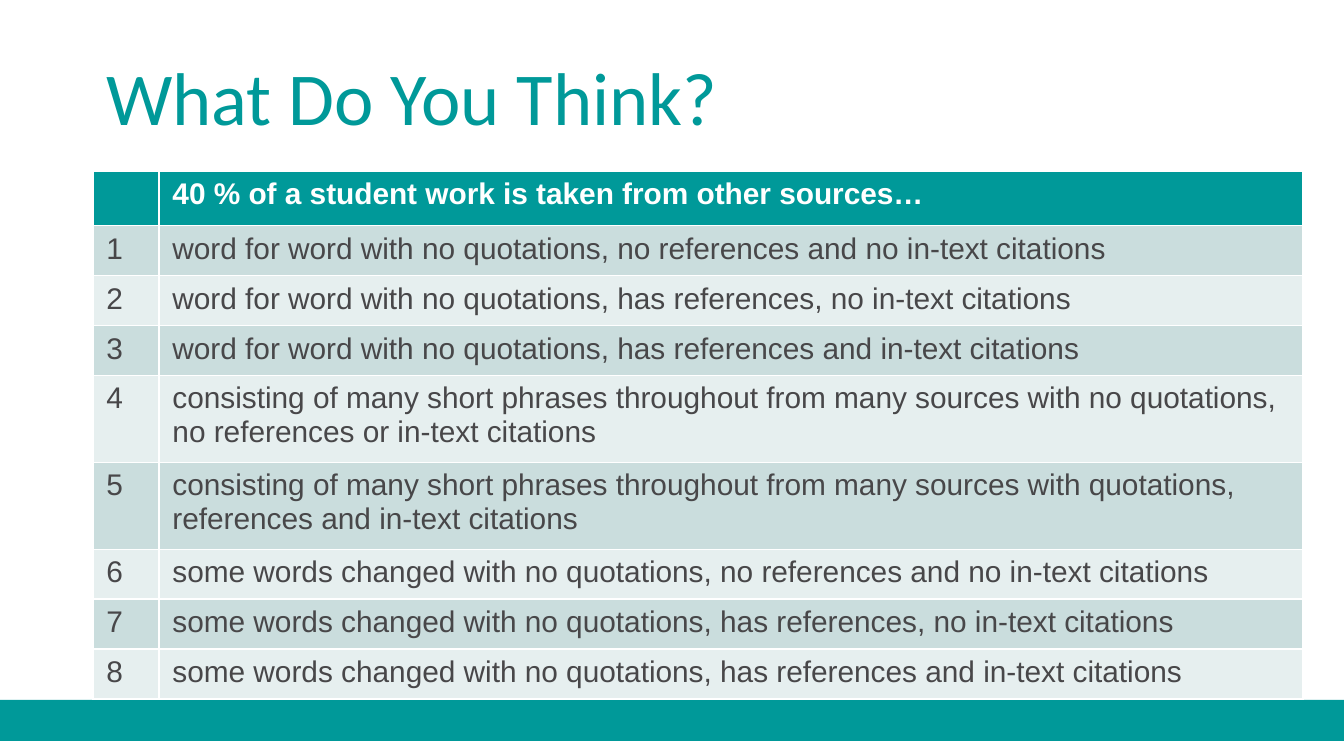
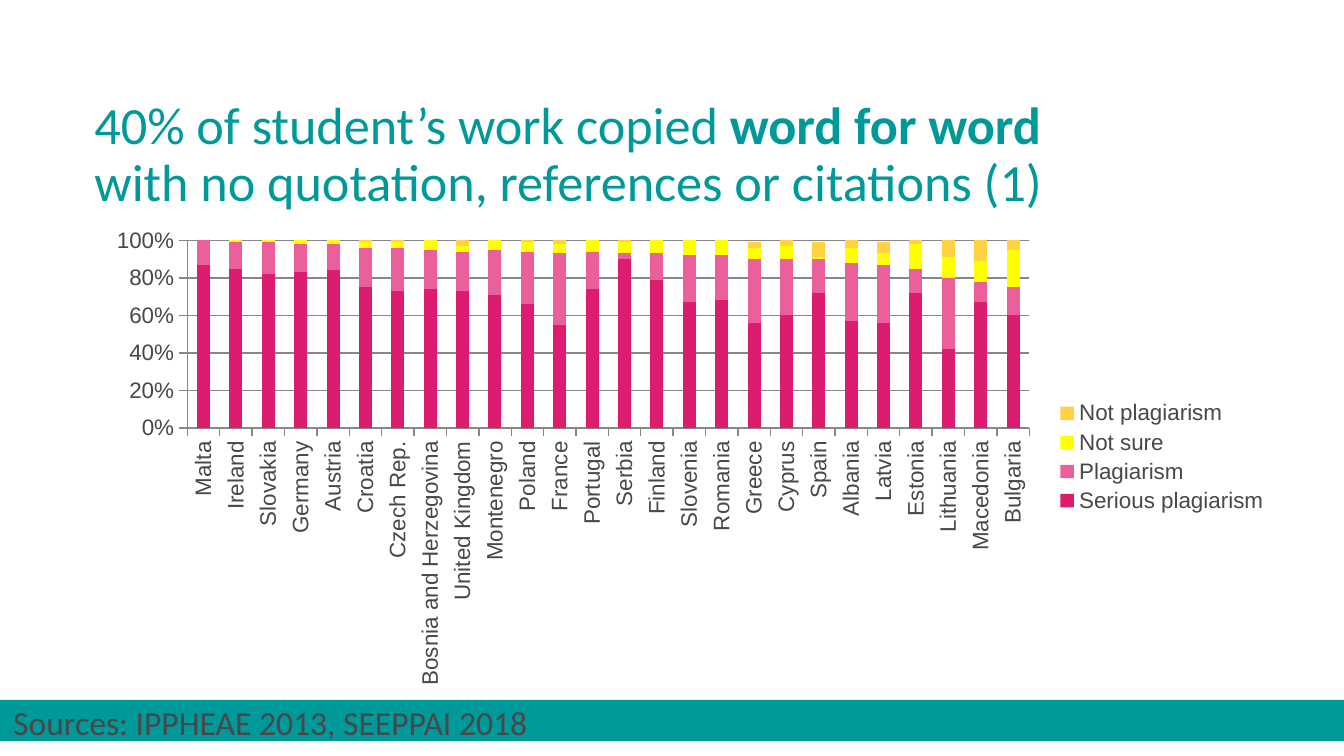
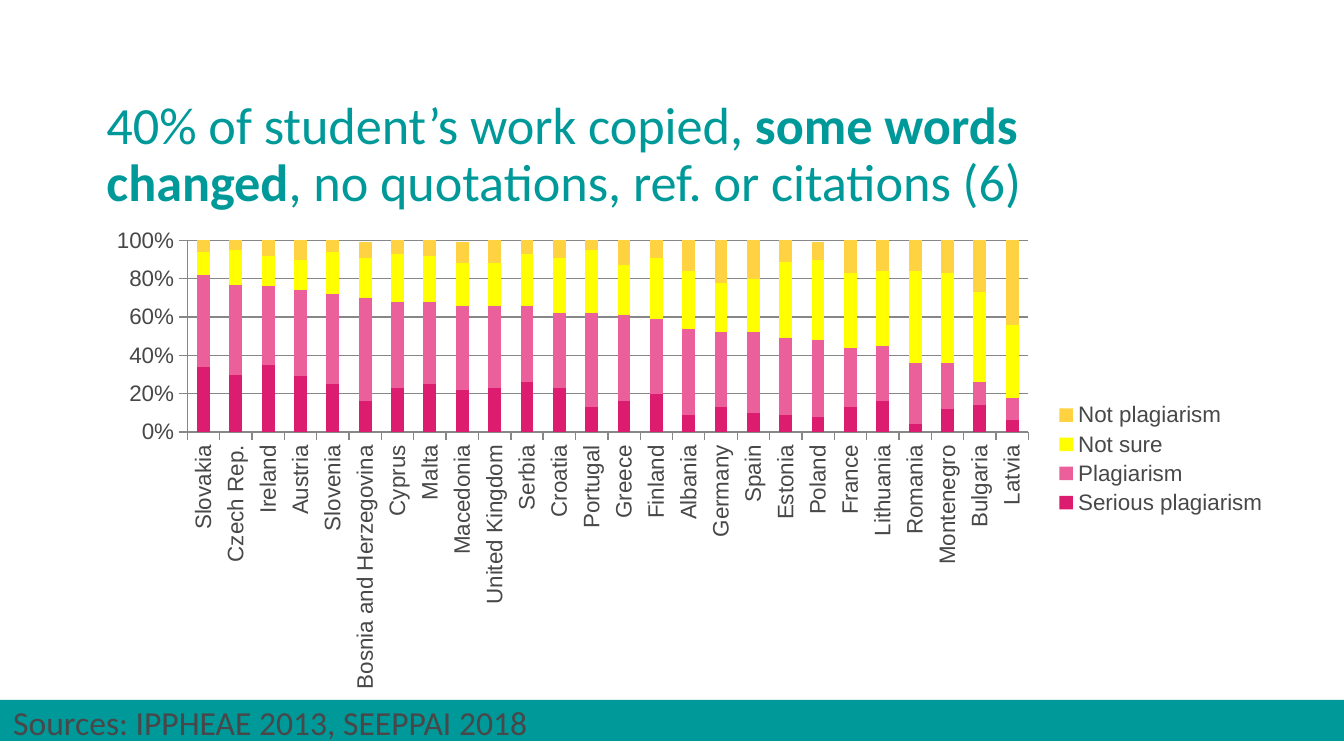
from pptx import Presentation
from pptx.chart.data import CategoryChartData
from pptx.dml.color import RGBColor
from pptx.enum.chart import XL_CHART_TYPE, XL_LEGEND_POSITION, XL_TICK_MARK
from pptx.enum.shapes import MSO_SHAPE
from pptx.enum.text import MSO_ANCHOR, MSO_AUTO_SIZE, PP_ALIGN
from pptx.util import Inches, Pt

TEAL, GREY, WHITE, AXIS_GREY = "009999", "484749", "FFFFFF", "878787"
ROW_FILLS = ["E6EFEF", "CADDDD"]
HEADING_FONT, BODY_FONT = "Calibri", "Arial"
PAGE_WIDTH, PAGE_HEIGHT = 1344, 756
LEFT = 93

QUESTION = {
    "title": [("What Do You Think?", False)],
    "title_box": (LEFT, 40, 1016, 122),
    "header": "40 % of a student work is taken from other sources…",
    "cases": [
        "word for word with no quotations, no references and no in-text citations",
        "word for word with no quotations, has references, no in-text citations",
        "word for word with no quotations, has references and in-text citations",
        "consisting of many short phrases throughout from many sources with no quotations, "
        "no references or in-text citations",
        "consisting of many short phrases throughout from many sources with quotations, "
        "references and in-text citations",
        "some words changed with no quotations, no references and no in-text citations",
        "some words changed with no quotations, has references, no in-text citations",
        "some words changed with no quotations, has references and in-text citations",
    ],
}
ONE_LINE, TWO_LINES, LINE_LIMIT = 50, 87, 90
NUMBER_WIDTH, CASE_WIDTH = 66, 1144

SOURCES = "Sources: IPPHEAE 2013, SEEPPAI 2018"
ANSWERS = [
    ("Serious plagiarism", "DC1C6E"),
    ("Plagiarism", "EB5F9B"),
    ("Not sure", "FFFF00"),
    ("Not plagiarism", "FFD242"),
]
SURVEYS = [
    {
        "title": [
            ("40% of student’s work copied ", False),
            ("word for word ", True),
            ("with no quotation, references or citations (1)", False),
        ],
        "title_box": (81, 93, 1052, 126),
        "chart_box": (LEFT, 219, 1189, 476),
        "countries": [
            "Malta", "Ireland", "Slovakia", "Germany", "Austria", "Croatia", "Czech Rep.",
            "Bosnia and Herzegovina", "United Kingdom", "Montenegro", "Poland", "France",
            "Portugal", "Serbia", "Finland", "Slovenia", "Romania", "Greece", "Cyprus",
            "Spain", "Albania", "Latvia", "Estonia", "Lithuania", "Macedonia", "Bulgaria",
        ],
        "shares": [
            [0.87, 0.85, 0.82, 0.83, 0.84, 0.75, 0.73, 0.74, 0.73, 0.71, 0.66, 0.55, 0.74,
             0.9, 0.79, 0.67, 0.68, 0.56, 0.6, 0.72, 0.57, 0.56, 0.72, 0.42, 0.67, 0.6],
            [0.13, 0.14, 0.17, 0.15, 0.14, 0.21, 0.23, 0.21, 0.21, 0.24, 0.28, 0.38, 0.2,
             0.03, 0.14, 0.25, 0.24, 0.34, 0.3, 0.18, 0.31, 0.31, 0.13, 0.38, 0.11, 0.15],
            [0, 0.01, 0.01, 0.02, 0.02, 0.03, 0.03, 0.05, 0.03, 0.06, 0.05, 0.05, 0.06,
             0.06, 0.07, 0.08, 0.08, 0.06, 0.07, 0.01, 0.08, 0.06, 0.13, 0.11, 0.11, 0.2],
            [0, 0, 0.01, 0, 0.01, 0.01, 0.01, 0, 0.03, 0, 0.01, 0.02, 0.01,
             0.01, 0.01, 0, 0.01, 0.03, 0.03, 0.08, 0.04, 0.06, 0.02, 0.09, 0.11, 0.05],
        ],
    },
    {
        "title": [
            ("40% of student’s work copied, ", False),
            ("some words changed", True),
            (", no quotations, ref. or citations (6)", False),
        ],
        "title_box": (LEFT, 93, 1064, 126),
        "chart_box": (LEFT, 219, 1188, 480),
        "countries": [
            "Slovakia", "Czech Rep.", "Ireland", "Austria", "Slovenia",
            "Bosnia and Herzegovina", "Cyprus", "Malta", "Macedonia", "United Kingdom",
            "Serbia", "Croatia", "Portugal", "Greece", "Finland", "Albania", "Germany",
            "Spain", "Estonia", "Poland", "France", "Lithuania", "Romania", "Montenegro",
            "Bulgaria", "Latvia",
        ],
        "shares": [
            [0.34, 0.3, 0.35, 0.29, 0.25, 0.16, 0.23, 0.25, 0.22, 0.23, 0.26, 0.23, 0.13,
             0.16, 0.2, 0.09, 0.13, 0.1, 0.09, 0.08, 0.13, 0.16, 0.04, 0.12, 0.14, 0.06],
            [0.48, 0.47, 0.41, 0.45, 0.47, 0.54, 0.45, 0.43, 0.44, 0.43, 0.4, 0.39, 0.49,
             0.45, 0.39, 0.45, 0.39, 0.42, 0.4, 0.4, 0.31, 0.29, 0.32, 0.24, 0.12, 0.12],
            [0.12, 0.18, 0.16, 0.16, 0.22, 0.21, 0.25, 0.24, 0.22, 0.22, 0.27, 0.29, 0.33,
             0.26, 0.32, 0.3, 0.26, 0.28, 0.4, 0.42, 0.39, 0.39, 0.48, 0.47, 0.47, 0.38],
            [0.06, 0.06, 0.09, 0.1, 0.06, 0.08, 0.07, 0.09, 0.11, 0.12, 0.08, 0.09, 0.05,
             0.13, 0.09, 0.17, 0.22, 0.2, 0.11, 0.09, 0.17, 0.17, 0.16, 0.18, 0.27, 0.44],
        ],
    },
]


def px(*lengths):
    return [round(length * Inches(10) / PAGE_WIDTH) for length in lengths]


def rgb(color):
    return RGBColor.from_string(color)


def style_font(font, size, color, name, bold=False):
    font.size, font.name, font.bold = Pt(size), name, bold
    font.color.rgb = rgb(color)


def write(para, text, size=16, color=GREY, name=BODY_FONT, bold=False):
    span = para.add_run()
    span.text = text
    style_font(span.font, size, color, name, bold)


def add_page(deck, content, title_size):
    page = deck.slides.add_slide(deck.slide_layouts[5])
    title = page.shapes.title
    title.left, title.top, title.width, title.height = px(*content["title_box"])
    frame = title.text_frame
    frame.word_wrap, frame.auto_size = True, MSO_AUTO_SIZE.NONE
    frame.vertical_anchor = MSO_ANCHOR.MIDDLE
    para = frame.paragraphs[0]
    para.alignment, para.line_spacing = PP_ALIGN.LEFT, 0.9
    for text, bold in content["title"]:
        write(para, text, size=title_size, color=TEAL, name=HEADING_FONT, bold=bold)
    return page


def add_layout_band(page):
    band = page.shapes.add_shape(MSO_SHAPE.RECTANGLE, *px(0, 700, PAGE_WIDTH, 41))
    band.shadow.inherit = False
    band.fill.solid()
    band.fill.fore_color.rgb = rgb(TEAL)
    band.line.fill.background()
    page.slide_layout.shapes._spTree.append(band._element)


def add_case_table(page):
    rows = [("", QUESTION["header"])]
    rows += [(str(number), case) for number, case in enumerate(QUESTION["cases"], 1)]
    heights = [TWO_LINES if len(case) > LINE_LIMIT else ONE_LINE for _, case in rows]
    box = px(LEFT, 171, NUMBER_WIDTH + CASE_WIDTH, sum(heights))
    table = page.shapes.add_table(len(rows), 2, *box).table
    table.columns[0].width, table.columns[1].width = px(NUMBER_WIDTH, CASE_WIDTH)
    for index, (row, height) in enumerate(zip(rows, heights)):
        table.rows[index].height = px(height)[0]
        header = index == 0
        for column, text in enumerate(row):
            cell = table.cell(index, column)
            cell.fill.solid()
            cell.fill.fore_color.rgb = rgb(TEAL if header else ROW_FILLS[index % 2])
            if text:
                write(cell.text_frame.paragraphs[0], text,
                      color=WHITE if header else GREY, bold=header)


def add_survey_chart(page, survey):
    data = CategoryChartData(number_format="0%")
    data.categories = survey["countries"]
    for (answer, _), shares in zip(ANSWERS, survey["shares"]):
        data.add_series(answer, shares)
    box = px(*survey["chart_box"])
    chart = page.shapes.add_chart(XL_CHART_TYPE.COLUMN_STACKED, *box, data).chart
    style_font(chart.font, 12, GREY, BODY_FONT)
    chart.has_title = False
    chart.has_legend = True
    chart.legend.position = XL_LEGEND_POSITION.RIGHT
    chart.legend.include_in_layout = False
    plot = chart.plots[0]
    plot.gap_width, plot.overlap, plot.vary_by_categories = 150, 100, False
    for series, (_, color) in zip(plot.series, ANSWERS):
        series.format.fill.solid()
        series.format.fill.fore_color.rgb = rgb(color)
    countries, share = chart.category_axis, chart.value_axis
    share.minimum_scale, share.maximum_scale, share.major_unit = 0, 1, 0.2
    share.has_major_gridlines = True
    share.tick_labels.number_format = "0%"
    share.tick_labels.number_format_is_linked = False
    for axis in (countries, share):
        axis.major_tick_mark = XL_TICK_MARK.OUTSIDE
        style_font(axis.tick_labels.font, 12, GREY, BODY_FONT)
    for line in (countries.format.line, share.format.line, share.major_gridlines.format.line):
        line.color.rgb = rgb(AXIS_GREY)
        line.width = Pt(0.75)
    label_body = countries._element.txPr.bodyPr
    label_body.set("rot", "-5400000")
    label_body.set("vert", "horz")


def add_sources(page):
    box = page.shapes.add_textbox(*px(0, 695, 547, 54))
    box.text_frame.auto_size = MSO_AUTO_SIZE.SHAPE_TO_FIT_TEXT
    write(box.text_frame.paragraphs[0], SOURCES, size=18, name=HEADING_FONT)


def main():
    deck = Presentation()
    deck.slide_width, deck.slide_height = px(PAGE_WIDTH, PAGE_HEIGHT)
    page = add_page(deck, QUESTION, title_size=40)
    add_layout_band(page)
    add_case_table(page)
    for survey in SURVEYS:
        page = add_page(deck, survey, title_size=28)
        add_survey_chart(page, survey)
        add_sources(page)
    deck.save("out.pptx")


if __name__ == "__main__":
    main()
